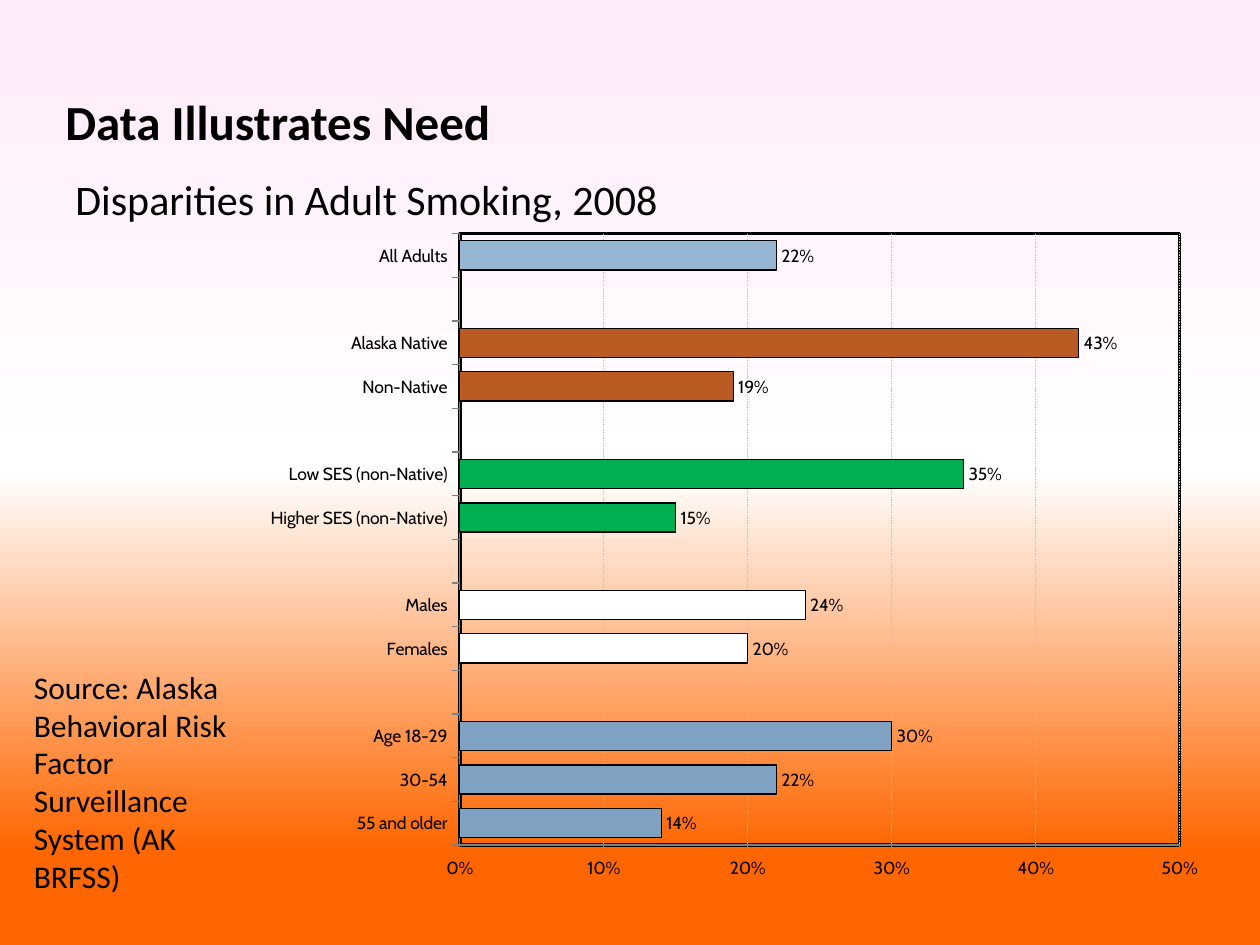
import lxml.etree
import pptx
import pptx.chart.data
import pptx.dml.color
import pptx.enum.chart
import pptx.enum.dml
import pptx.oxml
import pptx.oxml.ns
import pptx.util

RGB = pptx.dml.color.RGBColor
BLACK = RGB(0x00, 0x00, 0x00)
GRID_GREY = RGB(0xBF, 0xBF, 0xBF)
AXIS_GREY = RGB(0x80, 0x80, 0x80)
ALL_BLUE = RGB(0x94, 0xB6, 0xD2)
AGE_BLUE = RGB(0x7F, 0xA2, 0xC3)
SEX_WHITE = RGB(0xFF, 0xFF, 0xFF)
SES_GREEN = RGB(0x00, 0xB0, 0x50)
NATIVE_BROWN = RGB(0xB9, 0x5B, 0x22)
SKY_STOPS = [(10, "FF6600"), (50, "FFFFFF"), (100, "FFEBFA")]

# Bars run from the bottom up; an empty row parts the groups.
GROUPS = [
    (AGE_BLUE, [("55 and older", 0.14), ("30-54", 0.22), ("Age 18-29", 0.30)]),
    (SEX_WHITE, [("Females", 0.20), ("Males", 0.24)]),
    (SES_GREEN, [("Higher SES (non-Native)", 0.15), ("Low SES (non-Native)", 0.35)]),
    (NATIVE_BROWN, [("Non-Native", 0.19), ("Alaska Native", 0.43)]),
    (ALL_BLUE, [("All Adults", 0.22)]),
]

deck = pptx.Presentation()
deck.slide_width = pptx.util.Inches(10)
deck.slide_height = pptx.util.Inches(7.5)
page = deck.slides.add_slide(deck.slide_layouts[6])


def share(left, top, width, height):
    """Turn shares of the slide's size into lengths."""
    return [int(part * whole) for part, whole in zip(
        (left, top, width, height), (deck.slide_width, deck.slide_height) * 2)]


def add_text(text, place, size, bold=False, before=0, after=0):
    box = page.shapes.add_textbox(*share(*place))
    box.text_frame.word_wrap = True
    para = box.text_frame.paragraphs[0]
    para.space_before = pptx.util.Pt(before)
    para.space_after = pptx.util.Pt(after)
    span = para.add_run()
    span.text = text
    span.font.name = "Calibri"
    span.font.size = pptx.util.Pt(size)
    span.font.bold = bold
    span.font.color.rgb = BLACK


# Background: orange at the foot, white in the middle, pale pink at the top
fill = page.background.fill
fill.gradient()
fill.gradient_angle = 90
stop_list = fill.gradient_stops[0]._gs.getparent()
for stop in list(stop_list):
    stop_list.remove(stop)
for percent, colour in SKY_STOPS:
    stop = lxml.etree.SubElement(stop_list, pptx.oxml.ns.qn("a:gs"), pos=str(percent * 1000))
    lxml.etree.SubElement(stop, pptx.oxml.ns.qn("a:srgbClr"), val=colour)

add_text("Data Illustrates Need", (0.042, 0.09, 0.91, 0.076), 28, bold=True, before=14)
add_text("Disparities in Adult Smoking, 2008", (0.05, 0.177, 0.93, 0.067), 24)
add_text("Source: Alaska Behavioral Risk Factor Surveillance System (AK BRFSS)",
         (0.017, 0.7, 0.175, 0.256), 18, after=6)

rows = []
for colour, bars in GROUPS:
    if rows:
        rows.append(("", None, None))
    rows += [(name, value, colour) for name, value in bars]

data = pptx.chart.data.CategoryChartData(number_format="0%")
data.categories = [name for name, value, colour in rows]
data.add_series("Series 1", [value for name, value, colour in rows])
chart = page.shapes.add_chart(
    pptx.enum.chart.XL_CHART_TYPE.BAR_CLUSTERED, *share(0.2, 0.233, 0.767, 0.711), data).chart
chart.has_legend = False
chart.has_title = False
chart.font.name = "Cabin"
chart.font.size = pptx.util.Pt(10)
chart.font.color.rgb = BLACK

plot = chart.plots[0]
plot.gap_width = 50
plot.vary_by_categories = False
plot.has_data_labels = True
labels = plot.data_labels
labels.show_value = True
labels.number_format = "0%"
labels.number_format_is_linked = False
labels.position = pptx.enum.chart.XL_LABEL_POSITION.OUTSIDE_END

series = plot.series[0]
series.invert_if_negative = False
series.format.fill.solid()
series.format.fill.fore_color.rgb = ALL_BLUE
series.format.line.color.rgb = BLACK
series.format.line.width = pptx.util.Pt(0.75)
for index, (name, value, colour) in enumerate(rows):
    if colour is not None:
        bar = series.points[index].format
        bar.fill.solid()
        bar.fill.fore_color.rgb = colour
        bar.line.color.rgb = BLACK
        bar.line.width = pptx.util.Pt(0.75)

for axis in (chart.category_axis, chart.value_axis):
    axis.major_tick_mark = pptx.enum.chart.XL_TICK_MARK.OUTSIDE
    axis.format.line.color.rgb = AXIS_GREY
    axis.format.line.width = pptx.util.Pt(0.75)
scale = chart.value_axis
scale.minimum_scale = 0
scale.maximum_scale = 0.5
scale.major_unit = 0.1
scale.tick_labels.number_format = "0%"
scale.tick_labels.number_format_is_linked = False
grid_line = scale.major_gridlines.format.line
grid_line.color.rgb = GRID_GREY
grid_line.width = pptx.util.Pt(0.75)
grid_line.dash_style = pptx.enum.dml.MSO_LINE.ROUND_DOT

# Fixed inner plot area with a black frame
plot_area = chart._chartSpace.chart.plotArea
for old in plot_area.findall(pptx.oxml.ns.qn("c:layout")):
    plot_area.remove(old)
names = pptx.oxml.ns.nsdecls("c", "a")
plot_area.insert(0, pptx.oxml.parse_xml(
    f'<c:layout {names}><c:manualLayout><c:layoutTarget val="inner"/>'
    '<c:xMode val="edge"/><c:yMode val="edge"/><c:x val="0.215"/><c:y val="0.02"/>'
    '<c:w val="0.745"/><c:h val="0.91"/></c:manualLayout></c:layout>'))
plot_area.append(pptx.oxml.parse_xml(
    f'<c:spPr {names}><a:noFill/><a:ln w="25400"><a:solidFill>'
    f'<a:srgbClr val="{BLACK}"/></a:solidFill></a:ln></c:spPr>'))

deck.save("out.pptx")
